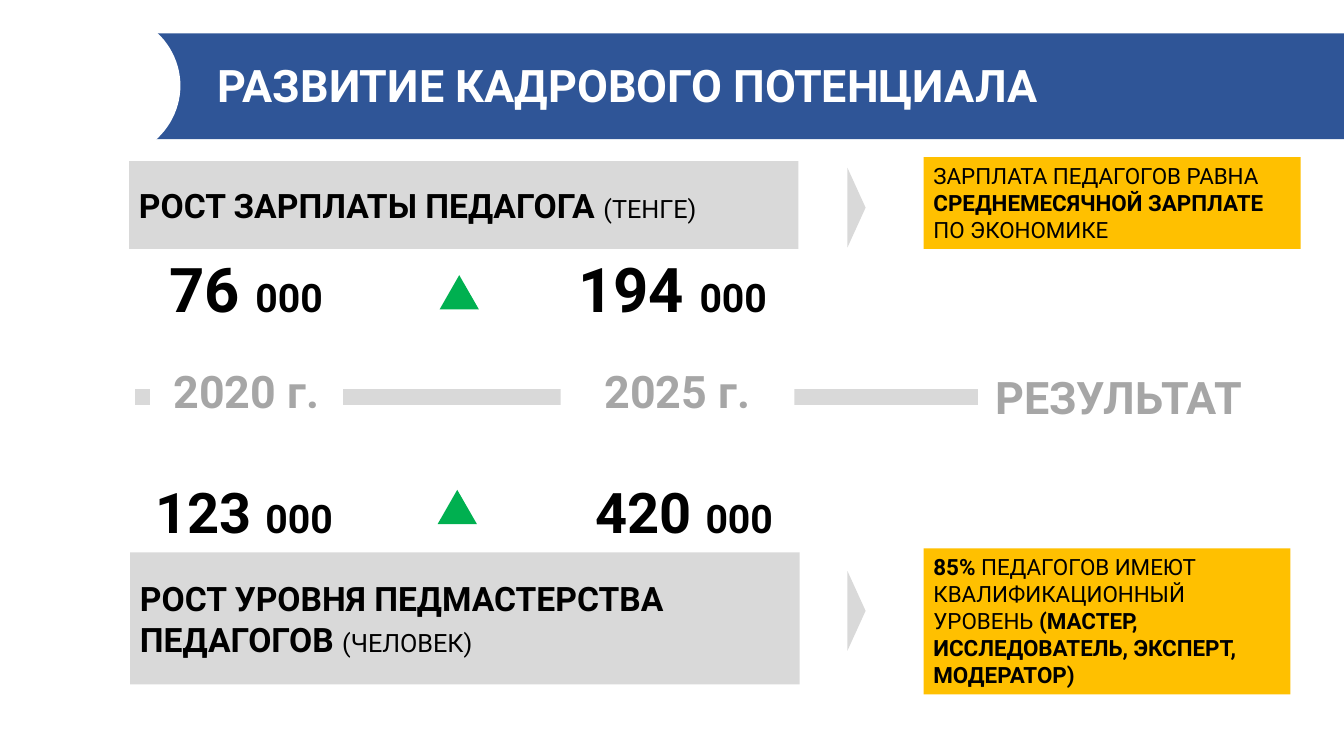
from lxml import etree
from pptx import Presentation
from pptx.dml.color import RGBColor
from pptx.enum.shapes import MSO_CONNECTOR, MSO_SHAPE
from pptx.enum.text import MSO_ANCHOR, PP_ALIGN
from pptx.oxml.ns import qn
from pptx.util import Inches, Pt

RECT, OVAL = MSO_SHAPE.RECTANGLE, MSO_SHAPE.OVAL
TRIANGLE = MSO_SHAPE.ISOSCELES_TRIANGLE
TOP, MIDDLE = MSO_ANCHOR.TOP, MSO_ANCHOR.MIDDLE
LEFT, CENTER = PP_ALIGN.LEFT, PP_ALIGN.CENTER
FONT = "Roboto"
COLORS = {
    "white": "FFFFFF", "black": "000000", "blue": "2F5597", "amber": "FFC000",
    "green": "00B050", "light": "D9D9D9", "grey": "A6A6A6",
}

prs = Presentation()
prs.slide_width, prs.slide_height = Inches(13.33), Inches(7.5)
slide = prs.slides.add_slide(prs.slide_layouts[6])


def add_block(kind, fill, left, top, width, height):
    block = slide.shapes.add_shape(
        kind, Inches(left), Inches(top), Inches(width), Inches(height))
    block.shadow.inherit = False
    block.line.fill.background()
    if fill:
        block.fill.solid()
        block.fill.fore_color.rgb = RGBColor.from_string(COLORS[fill])
    else:
        block.fill.background()
    return block


def write(block, runs, color="black", align=LEFT, anchor=TOP):
    """Fill a block with runs of (text, size, bold)."""
    frame = block.text_frame
    frame.word_wrap = True
    frame.vertical_anchor = anchor
    paragraph = frame.paragraphs[0]
    paragraph.alignment = align
    for text, size, bold in runs:
        run = paragraph.add_run()
        run.text = text
        run.font.name = FONT
        run.font.size = Pt(size)
        run.font.bold = bold
        run.font.color.rgb = RGBColor.from_string(COLORS[color])


# Title banner with a round notch
add_block(RECT, "blue", 0.92, 0.33, 12.41, 1.05)
add_block(OVAL, "white", 0.23, 0.11, 1.56, 1.48)
title = add_block(RECT, None, 2.04, 0.4, 9.84, 0.95)
write(title, [("РАЗВИТИЕ КАДРОВОГО ПОТЕНЦИАЛА", 32, True)], "white", anchor=MIDDLE)
title.text_frame.margin_left = title.text_frame.margin_right = Inches(0.12)
title.text_frame.paragraphs[0].line_spacing = 0.9

# Timeline, broken by its labels
timeline = slide.shapes.add_connector(
    MSO_CONNECTOR.STRAIGHT, Inches(1.34), Inches(3.94), Inches(11.56), Inches(3.94))
timeline.line.color.rgb = RGBColor.from_string(COLORS["light"])
timeline.line.width = Pt(11.25)
etree.SubElement(timeline._element.spPr, qn("a:effectLst"))
for label, left, top, width in [
    ("2020 г.", 1.49, 3.56, 1.91),
    ("2025 г.", 5.56, 3.56, 2.32),
    ("РЕЗУЛЬТАТ", 9.7, 3.62, 2.79),
]:
    stage = add_block(RECT, "white", left, top, width, 0.64)
    write(stage, [(label, 32, True)], "grey", CENTER)

# Indicator headings
for heading, unit, left, top, height in [
    ("РОСТ ЗАРПЛАТЫ ПЕДАГОГА ", "(ТЕНГЕ)", 1.28, 1.6, 0.87),
    ("РОСТ УРОВНЯ ПЕДМАСТЕРСТВА ПЕДАГОГОВ ", "(ЧЕЛОВЕК)", 1.29, 5.48, 1.31),
]:
    indicator = add_block(RECT, "light", left, top, 6.64, height)
    write(indicator, [(heading, 24, True), (unit, 18, False)], anchor=MIDDLE)

# Values for 2020 and 2025
for thousands, size, left, top, width, height in [
    ("76 ", 44, 1.28, 2.44, 2.32, 0.84),
    ("194 ", 44, 5.45, 2.44, 2.44, 0.84),
    ("123 ", 40, 1.34, 4.69, 2.16, 0.77),
    ("420 ", 40, 5.68, 4.69, 2.21, 0.77),
]:
    value = add_block(RECT, None, left, top, width, height)
    write(value, [(thousands, size, True), ("000", 28, True)], align=CENTER)

# Growth marks
for left, top in [(4.36, 2.73), (4.34, 4.86)]:
    add_block(TRIANGLE, "green", left, top, 0.39, 0.34)

# Pointers to the results
for top in (1.97, 5.97):
    add_block(TRIANGLE, "light", 8.1, top, 0.79, 0.18).rotation = 90

# Results
for runs, top, width, height in [
    ([("ЗАРПЛАТА ПЕДАГОГОВ РАВНА ", 16, False),
      ("СРЕДНЕМЕСЯЧНОЙ ЗАРПЛАТЕ ", 16, True),
      ("ПО ЭКОНОМИКЕ", 16, False)], 1.56, 3.74, 0.91),
    ([("85% ", 16, True),
      ("ПЕДАГОГОВ ИМЕЮТ КВАЛИФИКАЦИОННЫЙ УРОВЕНЬ ", 16, False),
      ("(МАСТЕР, ИССЛЕДОВАТЕЛЬ, ЭКСПЕРТ, МОДЕРАТОР)", 16, True)], 5.44, 3.64, 1.45),
]:
    write(add_block(RECT, "amber", 9.16, top, width, height), runs)

prs.save("out.pptx")
